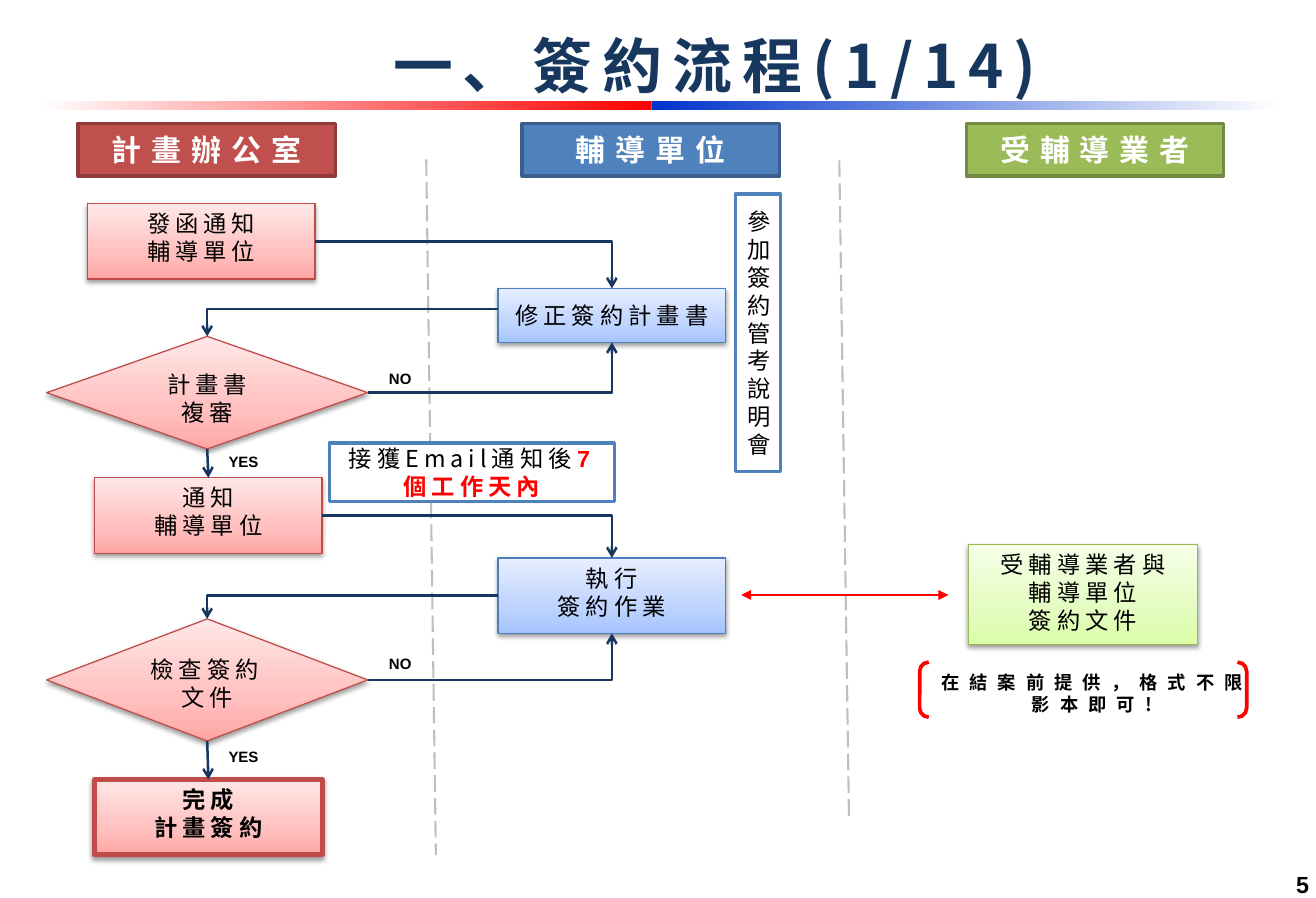
from lxml.etree import SubElement
from pptx import Presentation
from pptx.dml.color import RGBColor
from pptx.enum.dml import MSO_LINE
from pptx.enum.shapes import MSO_CONNECTOR, MSO_SHAPE
from pptx.enum.text import MSO_ANCHOR, PP_ALIGN
from pptx.oxml.ns import qn
from pptx.util import Pt

CJK, LATIN = "Noto Sans CJK SC", "Arial"
NAVY, RED, BLACK, WHITE = "17375E", "FF0000", "000000", "FFFFFF"
BLUE_EDGE = "4F81BD"
TOP, MIDDLE, BOTTOM = MSO_ANCHOR.TOP, MSO_ANCHOR.MIDDLE, MSO_ANCHOR.BOTTOM
CENTER, LEFT, RIGHT = PP_ALIGN.CENTER, PP_ALIGN.LEFT, PP_ALIGN.RIGHT
RECT, DIAMOND = MSO_SHAPE.RECTANGLE, MSO_SHAPE.DIAMOND

BARS = [((23, 60.5, 368.7, 5.8), [(0, WHITE), (100, RED)]),
        ((391.7, 60.5, 378, 5.8), [(0, "0033CC"), (100, WHITE)])]
HEADERS = [("計畫辦公室", "C0504D", "8E3B39"),
           ("輔導單位", "4F81BD", "3A5F8C"),
           ("受輔導業者", "9BBB59", "738A42")]
DIVIDERS = [(256.3, 95.8, 262.1, 514.1), (504.7, 96.5, 510.5, 491.8)]

THEMES = {
    "office": ([(0, "FFA6A5"), (35, "FFC0BF"), (100, "FFE7E7")], "BF4C48"),
    "unit": ([(0, "A4C4FF"), (35, "BFD4FF"), (100, "E6EEFF")], "4B7EBC"),
    "client": ([(0, "DAFDA7"), (35, "E4FCC2"), (100, "F5FFE7")], "98B955"),
}
STEPS = {
    "notice": (["發函通知", "輔導單位"], "office", RECT, (52.6, 122.4, 136.8, 45.4), TOP),
    "review": (["計畫書", "複審"], "office", DIAMOND, (28.1, 202.3, 193, 67.7), TOP),
    "inform": (["通知", "輔導單位"], "office", RECT, (56.9, 287.3, 136.8, 45.4), TOP),
    "check": (["檢查簽約文件"], "office", DIAMOND, (28.1, 372.2, 193, 73.4), TOP),
    "finish": (["完成", "計畫簽約"], "office", RECT, (56.9, 468.7, 136.8, 45.4), TOP),
    "revise": (["修正簽約計畫書"], "unit", RECT, (299.5, 173.5, 136.8, 32.4), MIDDLE),
    "sign": (["執行", "簽約作業"], "unit", RECT, (299.5, 335.5, 136.8, 45.4), TOP),
    "papers": (["受輔導業者與", "輔導單位", "簽約文件"], "client", RECT,
               (582.5, 327.6, 137.5, 59.8), TOP),
}
ELBOWS = [("notice", "revise", 0), ("revise", "review", -3.9), ("review", "revise", 0),
          ("inform", "sign", 0), ("sign", "check", 0), ("check", "sign", 0)]
DROPS = [("review", "inform"), ("check", "finish")]
ANSWERS = [("NO", 226.8, 218.9), ("NO", 226.8, 390.2),
           ("YES", 130.3, 268.6), ("YES", 130.3, 445.7)]
DEADLINE = [("接獲Email通知後", CJK, BLACK, False), ("7", LATIN, RED, True),
            ("個工作天內", CJK, RED, True)]

deck = Presentation()
deck.slide_width, deck.slide_height = Pt(791.3), Pt(540)
page = deck.slides.add_slide(deck.slide_layouts[6])


def paint(color, value):
    color.rgb = RGBColor.from_string(value)


def paint_gradient(shape, stops, angle):
    shape.fill.gradient()
    gradient = shape.element.spPr.find(qn("a:gradFill"))
    stop_list = gradient.find(qn("a:gsLst"))
    for old_stop in list(stop_list):
        stop_list.remove(old_stop)
    for position, value in stops:
        stop = SubElement(stop_list, qn("a:gs"), pos=str(position * 1000))
        SubElement(stop, qn("a:srgbClr"), val=value)
    gradient.find(qn("a:lin")).set("ang", str(angle * 60000))


def cast_shadow(shape):
    effects = shape.element.spPr.find(qn("a:effectLst"))
    shadow = SubElement(effects, qn("a:outerShdw"), blurRad=str(Pt(3.1)),
                        dist=str(Pt(1.6)), dir="5400000", rotWithShape="0")
    color = SubElement(shadow, qn("a:srgbClr"), val=BLACK)
    SubElement(color, qn("a:alpha"), val="38000")


def style(span, size, font=CJK, color=BLACK, bold=False, spacing=0):
    span.font.size, span.font.name, span.font.bold = Pt(size), font, bold
    paint(span.font.color, color)
    properties = span.font._element
    SubElement(properties, qn("a:ea"), typeface=font)
    if spacing:
        properties.set("spc", str(spacing * 100))


def write(box, lines, size, anchor=MIDDLE, align=CENTER, wrap=True, **look):
    frame = box.text_frame
    frame.text = "\n".join(lines)
    frame.word_wrap, frame.vertical_anchor = wrap, anchor
    for para in frame.paragraphs:
        para.alignment, para.line_spacing = align, Pt(size * 1.2)
        for span in para.runs:
            style(span, size, **look)
    return frame


def add_box(kind, bounds, edge=None, width=2, fill=None):
    shape = page.shapes.add_shape(kind, *map(Pt, bounds))
    shape.shadow.inherit = False
    if fill:
        shape.fill.solid()
        paint(shape.fill.fore_color, fill)
    else:
        shape.fill.background()
    if edge:
        paint(shape.line.color, edge)
        shape.line.width = Pt(width)
    else:
        shape.line.fill.background()
    return shape


def add_text(bounds, *args, **look):
    return write(page.shapes.add_textbox(*map(Pt, bounds)), *args, **look)


def add_line(ends, color, width=1.5, kind=MSO_CONNECTOR.STRAIGHT, head=None, tail=None):
    line = page.shapes.add_connector(kind, *map(Pt, ends))
    paint(line.line.color, color)
    line.line.width = Pt(width)
    properties = line._element.spPr
    for tag, arrow in (("a:headEnd", head), ("a:tailEnd", tail)):
        if arrow:
            SubElement(properties.find(qn("a:ln")), qn(tag), type=arrow)
    SubElement(properties, qn("a:effectLst"))
    if kind == MSO_CONNECTOR.ELBOW:
        properties.find(qn("a:prstGeom")).set("prst", "bentConnector2")
    return line


def elbow_ends(source, target, shift):
    left, top, width, height = STEPS[source][3]
    goal_left, goal_top, goal_width, goal_height = STEPS[target][3]
    goal_x = goal_left + goal_width / 2
    start_x = left + width if goal_x > left else left
    start_y = top + height / 2 + shift
    goal_y = goal_top if start_y < goal_top else goal_top + goal_height
    return start_x, start_y, goal_x, goal_y


for bounds, stops in BARS:
    paint_gradient(add_box(RECT, bounds), stops, 0)
add_text((734.4, 519.8, 59.8, 20.9), ["5"], 14, TOP, RIGHT, font=LATIN, bold=True)
title = add_text((151.9, 5, 555.8, 55.4), ["一、簽約流程(1/14)"], 36, BOTTOM,
                 color=NAVY, bold=True, spacing=6)
title.margin_bottom = 0

for column, (name, fill, edge) in enumerate(HEADERS):
    header = add_box(RECT, (46.8 + column * 267.1, 74.2, 154.8, 31.7), edge, fill=fill)
    write(header, [name], 18, color=WHITE, bold=True, spacing=6)
for ends in DIVIDERS:
    add_line(ends, "BFBFBF", 1.25).line.dash_style = MSO_LINE.LONG_DASH

boxes = {}
for key, (lines, theme, kind, bounds, anchor) in STEPS.items():
    stops, edge = THEMES[theme]
    last = key == "finish"
    boxes[key] = add_box(kind, bounds, edge, 3 if last else 0.75)
    paint_gradient(boxes[key], stops, 270)
    cast_shadow(boxes[key])
    write(boxes[key], lines, 14, anchor, bold=last, spacing=3)

for elbow in ELBOWS:
    add_line(elbow_ends(*elbow), NAVY, kind=MSO_CONNECTOR.ELBOW, tail="arrow")
for source, target in DROPS:
    drop = add_line((0, 0, 0, 0), NAVY, tail="arrow")
    drop.begin_connect(boxes[source], 2)
    drop.end_connect(boxes[target], 0)
add_line((570.2, 357.8, 445.7, 357.8), RED, head="triangle", tail="triangle")

for answer, left, top in ANSWERS:
    add_text((left, top, 32.4, 18), [answer], 9, TOP, LEFT, False, font=LATIN, bold=True)

briefing = add_box(RECT, (442.1, 116.6, 27.4, 167), BLUE_EDGE, fill=WHITE)
write(briefing, ["參加簽約管考說明會"], 14, spacing=3)

add_text((555.1, 400.3, 203, 33.8), ["在結案前提供，格式不限", "影本即可!"], 11, TOP,
         wrap=False, bold=True, spacing=6)
add_box(MSO_SHAPE.DOUBLE_BRACKET, (553, 398.2, 196.6, 33.1), RED, 2.25)

deadline = add_box(RECT, (198, 266.4, 171.4, 35.3), BLUE_EDGE, fill=WHITE)
sentence = write(deadline, [""], 14).paragraphs[0]
for words, font, color, bold in DEADLINE:
    span = sentence.add_run()
    span.text = words
    style(span, 14, font, color, bold, 3)

deck.save("out.pptx")
